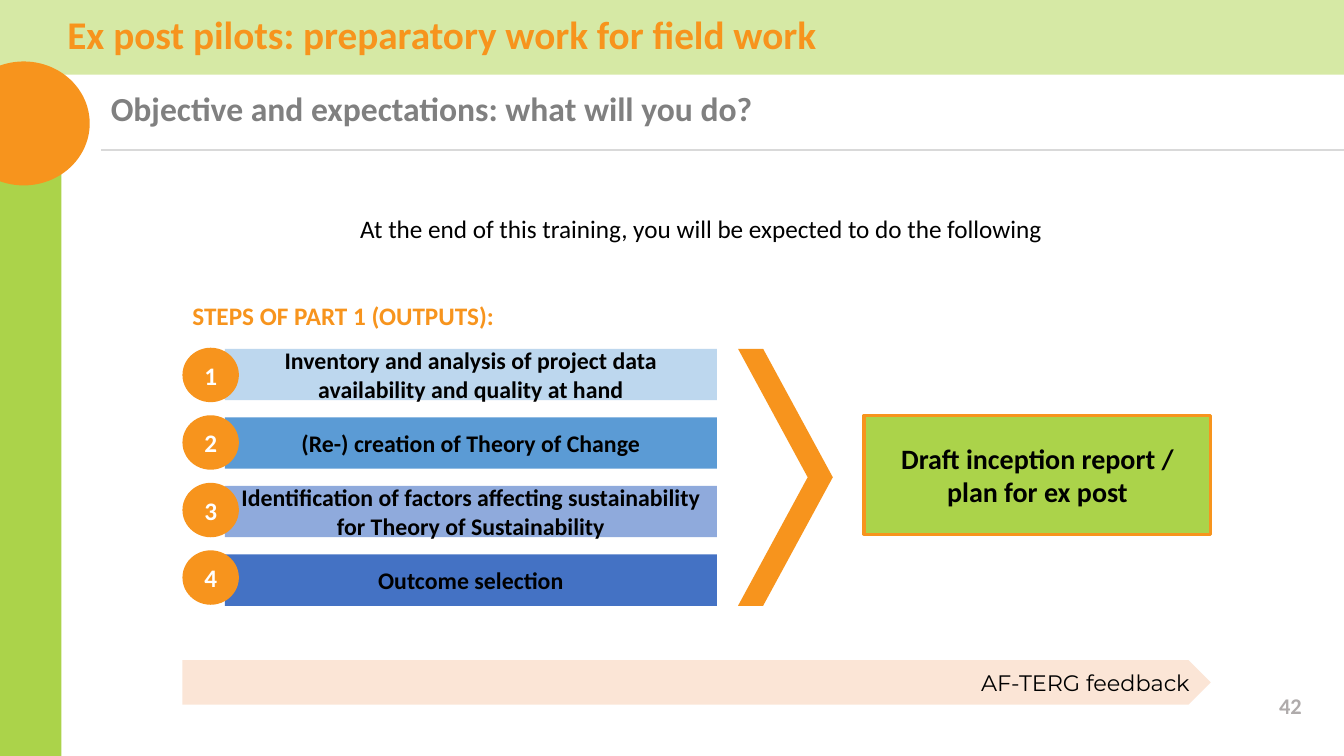
from lxml import etree
from pptx import Presentation
from pptx import util as u
from pptx.dml import color
from pptx.enum import shapes, text
from pptx.oxml import ns

ORANGE, GREEN, BLACK, WHITE = "F7941D", "ABD34A", "000000", "FFFFFF"
LEFT, CENTER, RIGHT = text.PP_ALIGN.LEFT, text.PP_ALIGN.CENTER, text.PP_ALIGN.RIGHT
TOP, MIDDLE = text.MSO_ANCHOR.TOP, text.MSO_ANCHOR.MIDDLE
KIND = shapes.MSO_SHAPE


def rgb(value):
    """Return the colour for a hex string."""
    return color.RGBColor.from_string(value)


class SlideBuilder:
    """Hold the text style and the current slide, and draw its elements."""

    style = {"name": "Calibri", "size": 18, "bold": True, "color": BLACK}

    def __init__(self, slide):
        """Keep the slide to draw on."""
        self.slide = slide

    def set_text(self, shape, lines, align, anchor, spacing=None, **changes):
        """Fill a shape with styled paragraphs."""
        frame = shape.text_frame
        frame.word_wrap = True
        frame.vertical_anchor = anchor
        frame.text = lines
        style = {**self.style, **changes}
        font_values = {"name": style["name"], "size": u.Pt(style["size"]), "bold": style["bold"]}
        for paragraph in frame.paragraphs:
            paragraph.alignment = align
            if spacing:
                paragraph.line_spacing = spacing
            for attribute, value in font_values.items():
                setattr(paragraph.font, attribute, value)
            paragraph.font.color.rgb = rgb(style["color"])

    def shape(self, kind, box, fill, lines="", border=None, align=CENTER, **changes):
        """Add a filled preset shape with optional border and text."""
        shape = self.slide.shapes.add_shape(kind, *map(u.Inches, box))
        shape.shadow.inherit = False
        shape.fill.solid()
        shape.fill.fore_color.rgb = rgb(fill)
        if border:
            shape.line.color.rgb = rgb(border)
            shape.line.width = u.Pt(2.25)
        else:
            shape.line.fill.background()
        if lines:
            self.set_text(shape, lines, align, MIDDLE, **changes)
        return shape

    def label(self, box, lines, align=LEFT, anchor=TOP, **changes):
        """Add a text box."""
        label = self.slide.shapes.add_textbox(*map(u.Inches, box))
        self.set_text(label, lines, align, anchor, **changes)

    def rule(self, start, end, line_color, width):
        """Add a straight line without a shadow."""
        rule = self.slide.shapes.add_connector(
            shapes.MSO_CONNECTOR.STRAIGHT, *map(u.Inches, start + end))
        rule.line.color.rgb = rgb(line_color)
        rule.line.width = u.Pt(width)
        etree.SubElement(rule._element.spPr, ns.qn("a:effectLst"))

    def step(self, index, caption, fill):
        """Add a numbered step: a bar and its circle."""
        self.shape(KIND.RECTANGLE, (2.23, 3.46 + 0.68 * index, 4.88, 0.51), fill, caption, size=17)
        self.shape(KIND.OVAL, (1.81, 3.45 + 0.67 * index, 0.56, 0.54), ORANGE,
                   str(index + 1), color=WHITE)


def main():
    """Build and save the slide."""
    presentation = Presentation()
    presentation.slide_width, presentation.slide_height = u.Inches(13.33), u.Inches(7.5)
    slide = presentation.slides.add_slide(presentation.slide_layouts[6])
    builder = SlideBuilder(slide)

    builder.shape(KIND.RECTANGLE, (0, 0, 0.61, 7.5), GREEN)
    builder.shape(KIND.RECTANGLE, (0, 0, 13.33, 0.74), "D6E9A5")
    builder.shape(KIND.OVAL, (-0.42, 0.61, 1.31, 1.23), ORANGE)
    builder.label((0.57, 0.11, 10.54, 0.64), "Ex post pilots: preparatory work for field work",
                  spacing=0.9, size=28, color=ORANGE)
    builder.label((1, 0.87, 11.72, 0.46), "Objective and expectations: what will you do?",
                  spacing=0.9, size=24, color="808080")
    builder.rule((1, 1.49), (13.33, 1.49), "D9D9D9", 1.5)

    builder.label((1.91, 2.07, 10.09, 0.4),
                  "At the end of this training, you will be expected to do the following",
                  CENTER, bold=False)
    builder.label((1.81, 2.93, 4.35, 0.4), "STEPS OF PART 1 (OUTPUTS):", color=ORANGE)
    steps = [
        ("Inventory and analysis of project data availability and quality at hand", "BDD7EE"),
        ("(Re-) creation of Theory of Change", "5B9BD5"),
        ("Identification of factors affecting sustainability for Theory of Sustainability", "8FAADC"),
        ("Outcome selection", "4472C4"),
    ]
    for index, (caption, fill) in enumerate(steps):
        builder.step(index, caption, fill)

    chevron = builder.shape(KIND.CHEVRON, (7.32, 3.46, 0.94, 2.55), ORANGE)
    chevron.adjustments[0] = 0.735
    builder.shape(KIND.RECTANGLE, (8.57, 4.12, 3.44, 1.18), GREEN,
                  "Draft inception report /\nplan for ex post", ORANGE, size=20)
    builder.shape(KIND.PENTAGON, (1.81, 6.55, 10.2, 0.44), "FBE5D6", "AF-TERG feedback",
                  align=RIGHT, name="Montserrat", size=16, bold=False)
    builder.label((12.1, 6.8, 0.91, 0.4), "42", RIGHT, MIDDLE, size=16, color="AFABAB")
    presentation.save("out.pptx")


if __name__ == "__main__":
    main()
